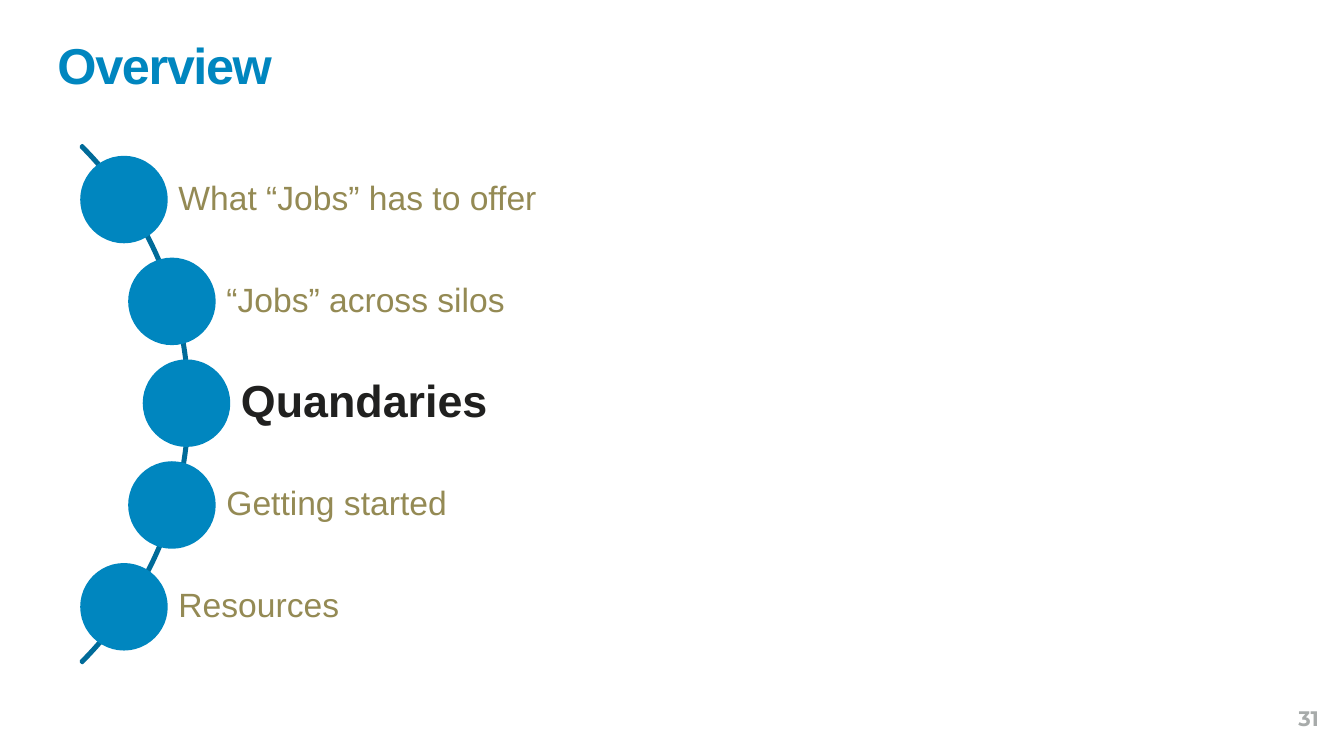
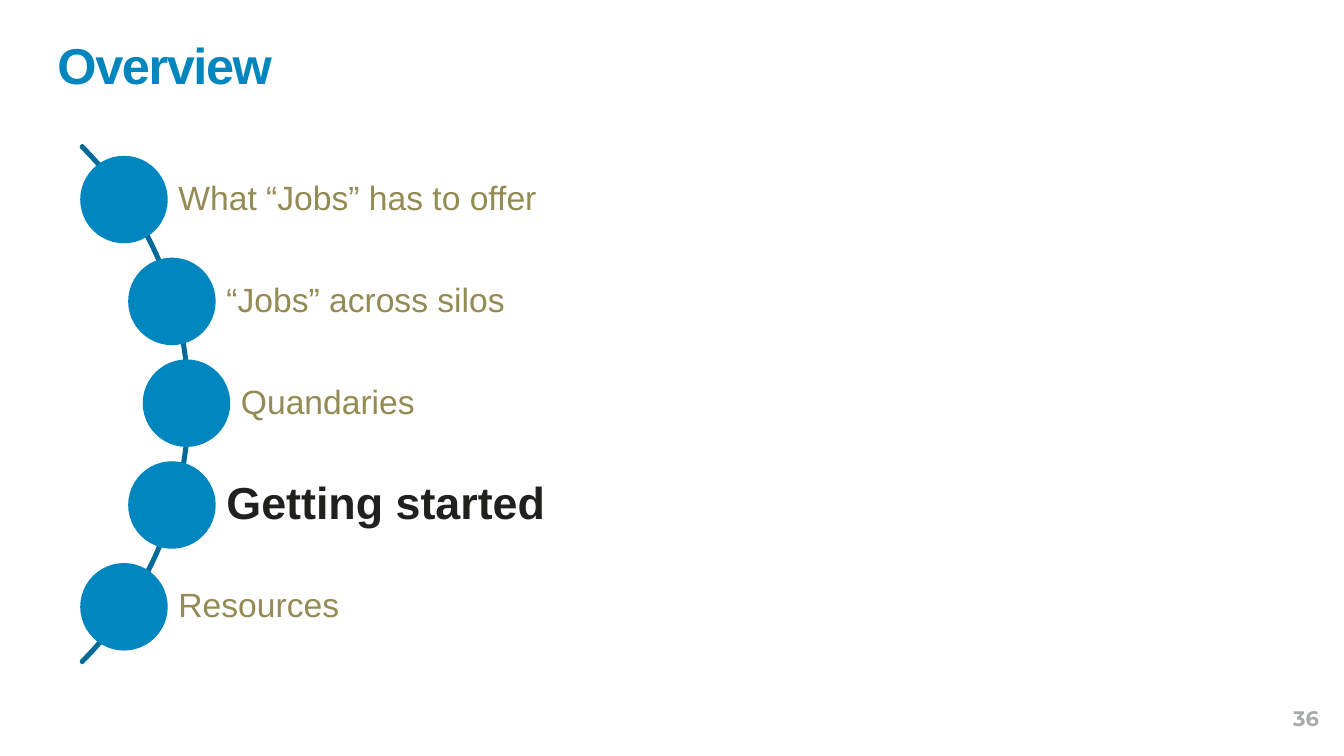
from math import sqrt

from pptx import Presentation
from pptx.dml.color import RGBColor
from pptx.enum.shapes import MSO_SHAPE as Shape
from pptx.enum.text import MSO_ANCHOR as Anchor, PP_ALIGN as Align
from pptx.util import Pt

PX = 9144
BLUE, DARK_BLUE = "0086BF", "006B99"
OLIVE, INK, GRAY, WHITE = "948A54", "20201F", "A7ABAA", "FFFFFF"
TITLE_BOX = (47, 24, 1182, 63)
AGENDA_BOX = (80, 38, 1165, 726)
NUMBER_BOX = (1234, 692, 84, 40)
TOPICS = [
    "What “Jobs” has to offer",
    "“Jobs” across silos",
    "Quandaries",
    "Getting started",
    "Resources",
]
SLIDES = [("Quandaries", "31"), ("Getting started", "36")]


def px(*lengths):
    return [round(length * PX) for length in lengths]


def rgb(value):
    return RGBColor.from_string(value)


def write(shape, text, size, color, font="Arial", bold=False, align=Align.LEFT,
          anchor=Anchor.MIDDLE, insets=(10, 5, 10, 5), line_spacing=1.0, tracking=0):
    frame = shape.text_frame
    frame.word_wrap = True
    frame.vertical_anchor = anchor
    (frame.margin_left, frame.margin_top,
     frame.margin_right, frame.margin_bottom) = px(*insets)
    paragraph = frame.paragraphs[0]
    paragraph.alignment = align
    paragraph.line_spacing = line_spacing
    run = paragraph.add_run()
    run.text = text
    run.font.name = font
    run.font.size = Pt(size)
    run.font.bold = bold
    run.font.color.rgb = rgb(color)
    if tracking:
        run.font._element.set("spc", str(tracking * 100))


def add_part(shapes, preset, box, fill=None, line=None):
    part = shapes.add_shape(preset, *px(*box))
    part.shadow.inherit = False
    if fill:
        part.fill.solid()
        part.fill.fore_color.rgb = rgb(fill)
    else:
        part.fill.background()
    if line:
        part.line.color.rgb = rgb(line)
        part.line.width = Pt(2)
    else:
        part.line.fill.background()
    return part


def add_title(slide, box, text):
    title = slide.shapes.title
    title.left, title.top, title.width, title.height = px(*box)
    write(title, text, 36, BLUE, bold=True, anchor=Anchor.TOP,
          insets=(10, 10, 10, 0), tracking=-1)


def add_agenda(slide, box, current):
    left, top, width, height = box
    disc, label_height, step, orbit = 84, 67, 101, 360
    center_x = left - 255
    center_y = top + height / 2 - 1
    shapes = slide.shapes.add_group_shape().shapes

    arc = add_part(shapes, Shape.BLOCK_ARC,
                   (center_x - height / 2, top, height, height), line=DARK_BLUE)
    for index, value in enumerate((189, 27, 0.003)):
        arc.adjustments[index] = value

    for index, topic in enumerate(TOPICS):
        rise = (index - (len(TOPICS) - 1) / 2) * step
        x = center_x + sqrt(orbit ** 2 - rise ** 2)
        y = center_y + rise
        label = add_part(shapes, Shape.RECTANGLE,
                         (x, y - label_height / 2, left + width - x, label_height),
                         fill=WHITE)
        active = topic == current
        write(label, topic, 32 if active else 24, INK if active else OLIVE,
              bold=active, insets=(54, 7, 7, 7), line_spacing=0.9)
        add_part(shapes, Shape.OVAL, (x - disc / 2, y - disc / 2, disc, disc),
                 fill=BLUE, line=BLUE)


def add_number(slide, box, number):
    page = slide.shapes.add_textbox(*px(*box))
    write(page, number, 15, GRAY, font="Montserrat", bold=True, align=Align.RIGHT)


def add_overview(deck, current, number):
    slide = deck.slides.add_slide(deck.slide_layouts[5])
    add_title(slide, TITLE_BOX, "Overview")
    add_agenda(slide, AGENDA_BOX, current)
    add_number(slide, NUMBER_BOX, number)


def main():
    deck = Presentation()
    deck.slide_width, deck.slide_height = px(1333, 750)
    for current, number in SLIDES:
        add_overview(deck, current, number)
    deck.save("out.pptx")


if __name__ == "__main__":
    main()
